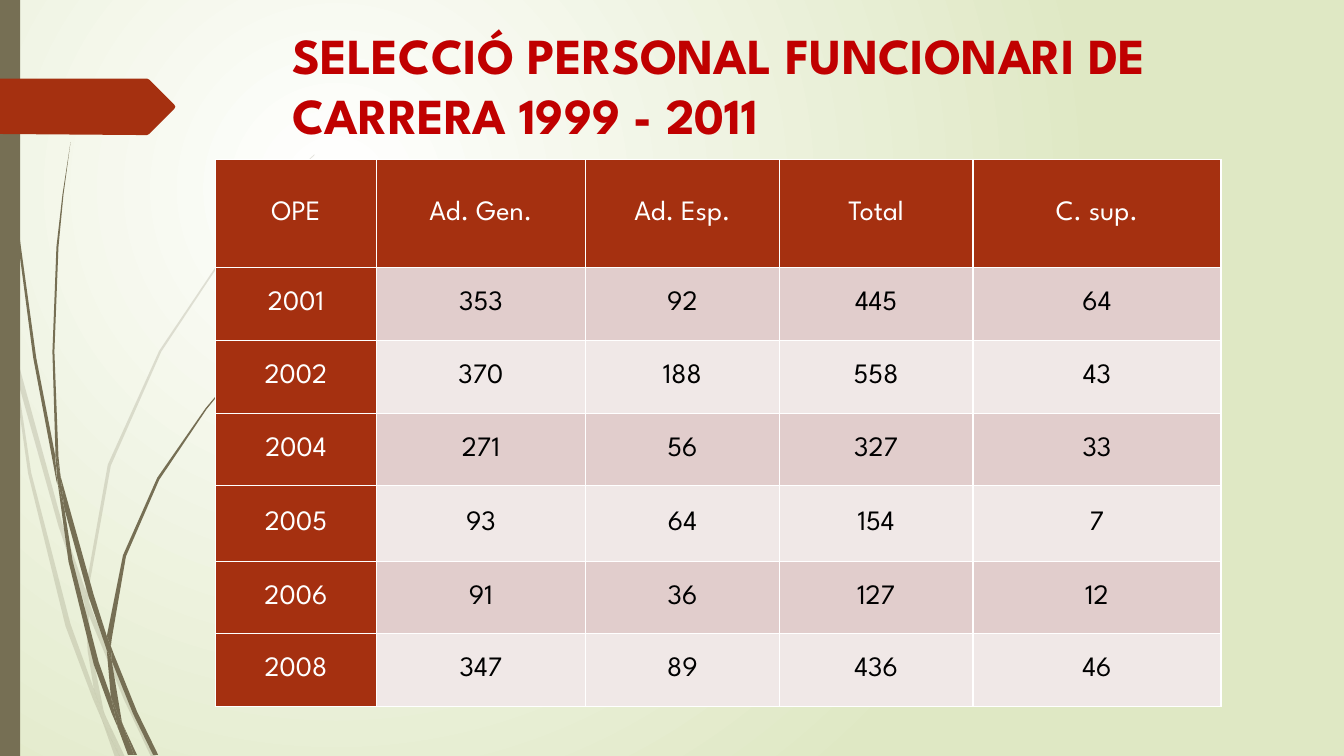
"""Build the slide on selection of career civil servants, 1999 - 2011."""
import pptx
import pptx.dml.color
import pptx.enum.text
import pptx.enum.shapes
import pptx.oxml
import pptx.oxml.ns
import pptx.util

Cm, Pt = pptx.util.Cm, pptx.util.Pt
RGB = pptx.dml.color.RGBColor.from_string
qn = pptx.oxml.ns.qn
NS = pptx.oxml.ns.nsdecls("a")
FONT = "League Spartan"
HUE = {"white": "FFFFFF", "black": "000000", "green": "DFE8C4", "olive": "766F54",
       "rust": "A53010", "red": "C00000", "dark": "E1CDCC", "pale": "F0E8E7"}

PALE_WISPS = [
    [(11, 350), (9, 322), (0, 282), (0, 299), (10, 344)],
    [(58, 522), (84, 599), (85, 586), (62, 520), (14, 345), (17, 376)],
    [(92, 607), (88, 596), (88, 610), (123, 694), (150, 751), (155, 751), (127, 692)],
    [(119, 751), (124, 751), (105, 711)],
    [(93, 683), (70, 619), (31, 469), (17, 376), (11, 350), (28, 470), (65, 621),
     (92, 693), (101, 714), (99, 707)],
    [(84, 599), (87, 646), (93, 683), (96, 692), (105, 711), (103, 706), (91, 646),
     (88, 610), (88, 608)],
    [(88, 584), (110, 462), (160, 349), (229, 245), (268, 198), (290, 175), (312, 154),
     (312, 153), (289, 175), (268, 197), (228, 244), (158, 348), (107, 461), (85, 584),
     (85, 586), (88, 596)],
    [(101, 714), (114, 751), (119, 751)],
    [(88, 608), (88, 610), (88, 596), (85, 586), (84, 599)],
    [(96, 692), (93, 683), (99, 707), (101, 714), (119, 751), (105, 711)],
]
DARK_WISPS = [
    [(7, 110), (17, 233), (33, 355), (56, 477), (57, 481), (55, 457), (55, 453),
     (36, 355), (19, 232), (8, 109), (5, 48), (4, 0), (3, 0), (4, 48)],
    [(88, 592), (106, 645), (106, 633), (106, 631), (93, 590), (60, 472), (64, 505)],
    [(113, 649), (110, 641), (111, 656), (132, 708), (152, 749), (157, 749), (136, 706)],
    [(110, 691), (98, 657), (72, 556), (64, 505), (57, 477), (68, 557), (93, 659),
     (111, 708), (117, 722), (116, 717)],
    [(60, 472), (58, 453), (54, 349), (58, 245), (63, 193), (70, 141), (62, 193),
     (56, 245), (52, 349), (55, 449)],
    [(133, 749), (136, 749), (122, 719)],
    [(57, 477), (64, 505), (60, 472), (55, 449), (55, 453)],
    [(111, 633), (125, 552), (158, 476), (205, 406), (231, 374), (245, 359), (261, 344),
     (260, 344), (245, 358), (231, 373), (204, 405), (156, 474), (122, 551), (106, 631),
     (110, 641)],
    [(117, 722), (127, 749), (131, 749)],
    [(106, 645), (110, 691), (116, 706), (122, 719), (121, 716), (111, 656), (109, 651)],
    [(106, 645), (109, 651), (111, 656), (110, 641), (106, 631), (106, 633)],
    [(116, 706), (110, 691), (116, 717), (117, 722), (130, 749), (133, 749), (122, 719)],
]
ARROW = [(0, 78), (146, 78), (148, 79), (173, 104), (174, 106), (173, 108), (148, 133),
         (146, 134), (136, 134), (0, 133)]
ROWS = [
    ["OPE", "Ad. Gen.", "Ad. Esp.", "Total", "C. sup."],
    ["2001", "353", "92", "445", "64"],
    ["2002", "370", "188", "558", "43"],
    ["2004", "271", "56", "327", "33"],
    ["2005", "93", "64", "154", "7"],
    ["2006", "91", "36", "127", "12"],
    ["2008", "347", "89", "436", "46"],
]
WIDTHS = [4.04, 5.28, 4.88, 4.88, 6.25]
HEIGHTS = [2.74, 1.83, 1.83, 1.83, 1.9, 1.83, 1.83]


def paint(shape, hue):
    """Give a shape a flat fill with no outline or shadow."""
    shape.shadow.inherit = False
    shape.fill.solid()
    shape.fill.fore_color.rgb = RGB(HUE[hue])
    shape.line.fill.background()


def trace(points, hue):
    """Draw a closed outline from points in hundredths of an inch."""
    pen = shapes.build_freeform(*points[0], scale=Cm(0.0254))
    pen.add_line_segments(points[1:], close=True)
    shape = pen.convert_to_shape()
    paint(shape, hue)
    return shape


deck = pptx.Presentation()
deck.slide_width, deck.slide_height = Cm(33.87), Cm(19.05)
slide = deck.slides.add_slide(deck.slide_layouts[6])
shapes = slide.shapes

back = slide.background.fill
back.gradient()
for stop, hue, place in zip(back.gradient_stops, ["white", "green"], [0, 1]):
    stop.color.rgb = RGB(HUE[hue])
    stop.position = place
lin = next(slide.element.iter(qn("a:lin")))
lin.getparent().replace(lin, pptx.oxml.parse_xml(
    f'<a:path {NS} path="circle">'
    '<a:fillToRect l="50000" t="50000" r="100000" b="100000"/></a:path>'))

for points in PALE_WISPS:
    wisp = trace(points, "olive")
    tone = next(wisp.element.spPr.iter(qn("a:srgbClr")))
    tone.append(pptx.oxml.parse_xml(f'<a:alpha {NS} val="20000"/>'))
for points in DARK_WISPS:
    trace(points, "olive")

band = shapes.add_shape(pptx.enum.shapes.MSO_SHAPE.RECTANGLE, 0, 0, Cm(0.51), Cm(19.05))
paint(band, "olive")
trace(ARROW, "rust")

title = shapes.add_textbox(Cm(7.11), Cm(0.48), Cm(24.77), Cm(4.8)).text_frame
title.word_wrap = True
title.text = "SELECCIÓ PERSONAL FUNCIONARI DE CARRERA 1999 - 2011"
font = title.paragraphs[0].font
font.name, font.size, font.bold = FONT, Pt(36), True
font.color.rgb = RGB(HUE["red"])

table = shapes.add_table(len(ROWS), len(WIDTHS), Cm(5.44), Cm(4.01),
                         Cm(sum(WIDTHS)), Cm(sum(HEIGHTS))).table
for column, width in zip(table.columns, WIDTHS):
    column.width = Cm(width)
for row, height in zip(table.rows, HEIGHTS):
    row.height = Cm(height)

for r, texts in enumerate(ROWS):
    for c, text in enumerate(texts):
        head = r == 0 or c == 0
        cell = table.cell(r, c)
        cell.text = text
        cell.vertical_anchor = pptx.enum.text.MSO_ANCHOR.MIDDLE
        cell.margin_left = cell.margin_right = Cm(0.18)
        cell.margin_top = cell.margin_bottom = 0
        line = cell.text_frame.paragraphs[0]
        line.alignment = pptx.enum.text.PP_ALIGN.CENTER
        line.font.name, line.font.size, line.font.bold = FONT, Pt(20), False
        line.font.color.rgb = RGB(HUE["white" if head else "black"])
        cell.fill.solid()
        cell.fill.fore_color.rgb = RGB(HUE["rust" if head else "dark" if r % 2 else "pale"])
        props = cell._tc.get_or_add_tcPr()
        for i, side in enumerate("LRTB"):
            props.insert(i, pptx.oxml.parse_xml(
                f'<a:ln{side} {NS} w="12700"><a:solidFill>'
                f'<a:srgbClr val="{HUE["white"]}"/></a:solidFill></a:ln{side}>'))

deck.save("out.pptx")
